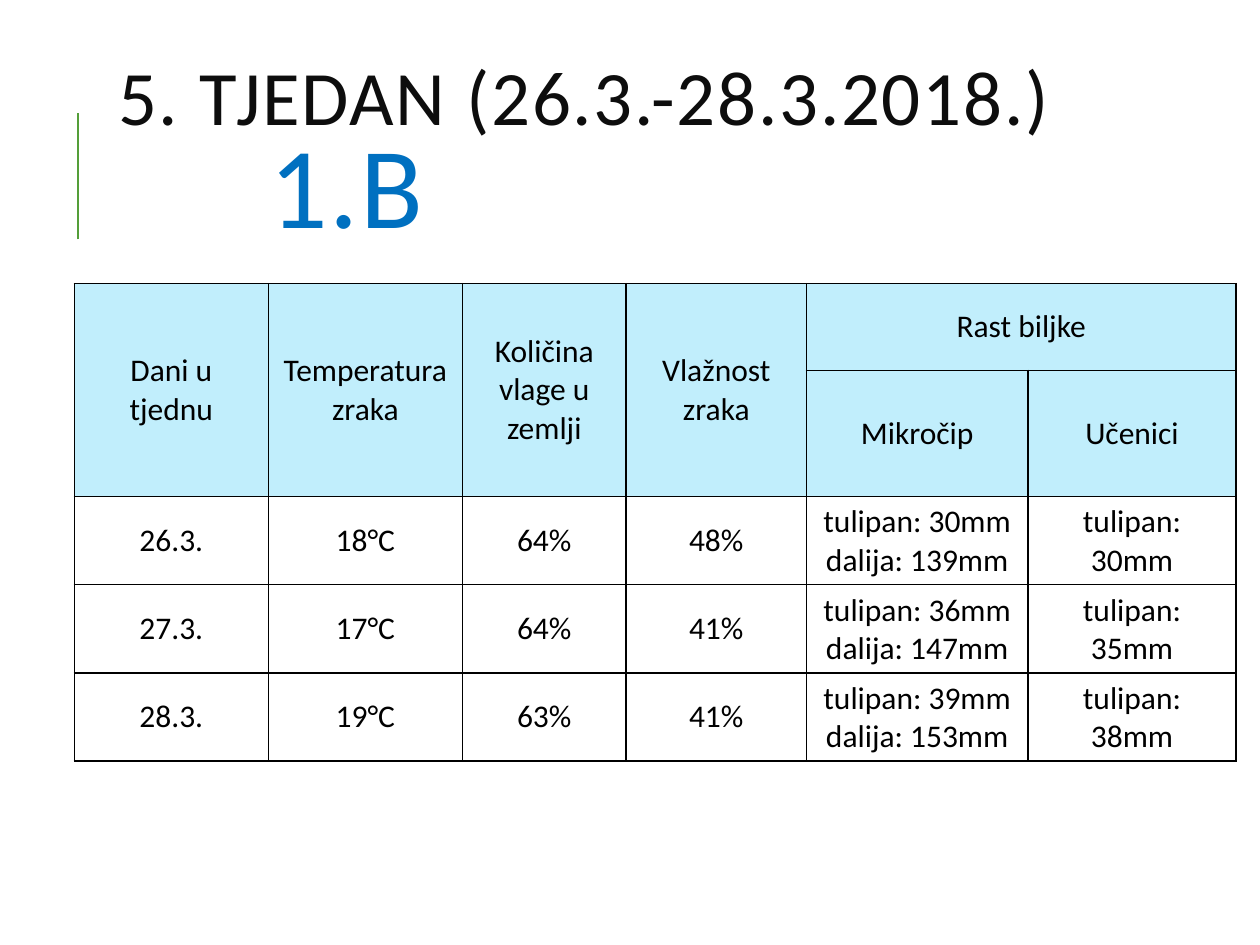
from lxml.etree import SubElement as Sub
from pptx import Presentation
from pptx.dml.color import RGBColor
from pptx.enum.shapes import MSO_CONNECTOR as Conn
from pptx.enum.text import MSO_ANCHOR as Anchor, PP_ALIGN as Align
from pptx.oxml.ns import qn
from pptx.util import Inches, Pt

WIDE, HIGH = Inches(10), Inches(7.5)
FONT = "Calibri"
BLACK, HEAD = "000000", "C1EEFC"

COLS = [1.54, 1.54, 1.3, 1.43, 1.76, 1.65]
ROWS = [0.69, 0.69, 0.56, 0.56, 0.56]
HEADS = ["Dani u tjednu", "Temperatura zraka", "Količina vlage u zemlji",
         "Vlažnost zraka", "Rast biljke", ""]
SUBS = ["", "", "", "", "Mikročip", "Učenici"]
DAYS = [
    ["26.3.", "18°C", "64%", "48%", "tulipan: 30mm\ndalija: 139mm", "tulipan: 30mm"],
    ["27.3.", "17°C", "64%", "41%", "tulipan: 36mm\ndalija: 147mm", "tulipan: 35mm"],
    ["28.3.", "19°C", "63%", "41%", "tulipan: 39mm\ndalija: 153mm", "tulipan: 38mm"],
]


def color(code):
    return RGBColor.from_string(code)


def style(font, size, code):
    font.name, font.size = FONT, Pt(size)
    font.color.rgb = color(code)


def add_rule(slide, x, top, end):
    line = slide.shapes.add_connector(Conn.STRAIGHT, x, end, x, top)
    line.line.color.rgb = color("549E39")
    line.line.width = Pt(1.5)
    Sub(line.element.spPr, qn("a:effectLst"))


def add_title(slide, box, lines):
    frame = slide.shapes.add_textbox(*box).text_frame
    frame.word_wrap = True
    frame.vertical_anchor = Anchor.MIDDLE
    for i, (text, size, code, indent) in enumerate(lines):
        para = frame.add_paragraph() if i else frame.paragraphs[0]
        para.line_spacing = 0.8
        style(para.font, size, code)
        run = para.add_run()
        run.text = text
        run.font.size = Pt(size)
        props = run._r.get_or_add_rPr()
        props.set("spc", "100")
        para._p.get_or_add_pPr().set("marL", str(Inches(indent)))


def add_edges(cell):
    props = cell._tc.get_or_add_tcPr()
    for side in ("lnL", "lnR", "lnT", "lnB"):
        edge = Sub(props, qn(f"a:{side}"), w=str(Pt(1)))
        fill = Sub(edge, qn("a:solidFill"))
        Sub(fill, qn("a:srgbClr"), val=BLACK)


def fill_cell(cell, text, back):
    add_edges(cell)
    if back:
        cell.fill.solid()
        cell.fill.fore_color.rgb = color(back)
    else:
        cell.fill.background()
    cell.vertical_anchor = Anchor.MIDDLE
    cell.text = text
    for para in cell.text_frame.paragraphs:
        para.alignment = Align.CENTER
        style(para.font, 18, BLACK)


def add_grid(slide, left, top, data):
    grid = slide.shapes.add_table(
        len(ROWS), len(COLS), left, top,
        Inches(sum(COLS)), Inches(sum(ROWS))).table
    grid.first_row = grid.horz_banding = False
    for col, size in zip(grid.columns, COLS):
        col.width = Inches(size)
    for row, size in zip(grid.rows, ROWS):
        row.height = Inches(size)
    for r, texts in enumerate(data):
        for c, text in enumerate(texts):
            fill_cell(grid.cell(r, c), text, HEAD if r < 2 else None)
    # Tall heads on the left, one wide head over the last two columns
    for c in range(4):
        grid.cell(0, c).merge(grid.cell(1, c))
    grid.cell(0, 4).merge(grid.cell(0, 5))


def main():
    deck = Presentation()
    deck.slide_width, deck.slide_height = WIDE, HIGH
    slide = deck.slides.add_slide(deck.slide_layouts[6])

    # Accent rule and title
    add_rule(slide, Inches(0.62), int(HIGH * 0.12), Inches(1.9))
    box = [Inches(n) for n in (0.84, 0.44, 7.97, 1.64)]
    add_title(slide, box, [
        ("5. TJEDAN (26.3.-28.3.2018.)", 44, "0D0D0D", 0),
        ("1.B", 66, "0070C0", 1.2),
    ])

    # Weekly readings
    add_grid(slide, Inches(0.59), int(HIGH * 0.3), [HEADS, SUBS, *DAYS])
    deck.save("out.pptx")


if __name__ == "__main__":
    main()
